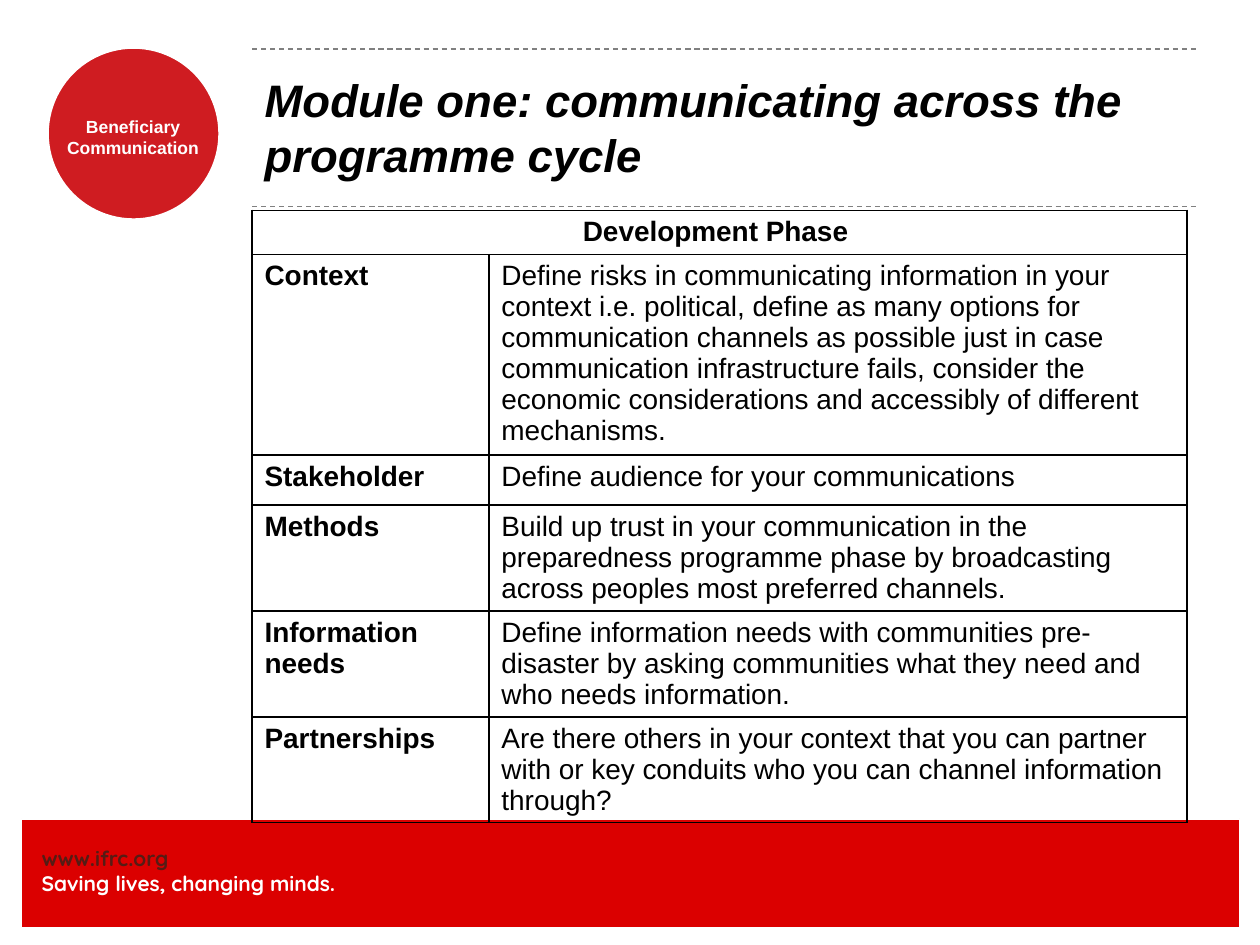
import pptx
import pptx.util
import pptx.dml.color
import pptx.enum.dml
import pptx.enum.shapes
import pptx.enum.text
import pptx.oxml
import pptx.oxml.ns
from lxml import etree

RGB = pptx.dml.color.RGBColor
BAR_RED = RGB(0xDB, 0x00, 0x00)
BADGE_RED = RGB(0xCF, 0x1C, 0x21)
BROWN = RGB(0x55, 0x1C, 0x15)
WHITE = RGB(0xFF, 0xFF, 0xFF)
BLACK = RGB(0, 0, 0)
GREY = RGB(0x80, 0x80, 0x80)

Inches, Pt = pptx.util.Inches, pptx.util.Pt
SHAPES = pptx.enum.shapes.MSO_SHAPE
ALIGN = pptx.enum.text.PP_ALIGN
ANCHOR = pptx.enum.text.MSO_ANCHOR

# Content column shared by the rules, the title and the table
LEFT, WIDTH = 2, 7.5
RULE_TOPS = (0.39, 1.64)
COLUMN_WIDTHS = (1.88, 5.54)
ROW_HEIGHTS = (0.35, 1.59, 0.4, 0.84, 0.84, 0.84)
TABLE_LINE = 17.7  # fixed line pitch keeps the table above the footer text

PHASE = "Development Phase "
TOPICS = [
    ("Context", "Define risks in communicating information in your context i.e. "
     "political, define as many options for communication channels as possible "
     "just in case communication infrastructure fails, consider the economic "
     "considerations and accessibly of different mechanisms."),
    ("Stakeholder", "Define audience for your communications"),
    ("Methods", "Build up trust in your communication in the preparedness "
     "programme phase by broadcasting across peoples most preferred channels."),
    ("Information needs", "Define information needs with communities "
     "pre-disaster by asking communities what they need and who needs information."),
    ("Partnerships", "Are there others in your context that you can partner with "
     "or key conduits who you can channel information through?"),
]


def style(paragraph, size, color, bold=True, italic=False, face="Arial", align=ALIGN.LEFT):
    paragraph.alignment = align
    for run in paragraph.runs:
        run.font.name = face
        run.font.size = Pt(size)
        run.font.bold = bold
        run.font.italic = italic
        run.font.color.rgb = color


def add_block(slide, kind, box, fill, line_width):
    block = slide.shapes.add_shape(kind, *map(Inches, box))
    block.shadow.inherit = False
    block.fill.solid()
    block.fill.fore_color.rgb = fill
    block.line.color.rgb = WHITE
    block.line.width = Pt(line_width)


def add_label(slide, box, text):
    frame = slide.shapes.add_textbox(*map(Inches, box)).text_frame
    frame.word_wrap = True
    frame.margin_left = frame.margin_right = frame.margin_top = frame.margin_bottom = 0
    frame.text = text
    return frame.paragraphs


def add_rule(slide, top):
    rule = slide.shapes.add_connector(
        pptx.enum.shapes.MSO_CONNECTOR.STRAIGHT,
        Inches(LEFT), Inches(top), Inches(LEFT + WIDTH), Inches(top))
    rule.line.color.rgb = GREY
    rule.line.width = Pt(0.75)
    rule.line.dash_style = pptx.enum.dml.MSO_LINE.DASH
    etree.SubElement(rule._element.spPr, pptx.oxml.ns.qn("a:effectLst"))


def add_title(slide, text):
    title = slide.shapes.title
    title.left, title.top = Inches(LEFT), Inches(0.38)
    title.width, title.height = Inches(WIDTH), Inches(1.25)
    frame = title.text_frame
    frame.text = text
    frame.word_wrap = True
    frame.auto_size = pptx.enum.text.MSO_AUTO_SIZE.NONE
    frame.vertical_anchor = ANCHOR.MIDDLE
    style(frame.paragraphs[0], 26, BLACK, italic=True)


def border_cell(cell):
    properties = cell._tc.get_or_add_tcPr()
    for index, side in enumerate(("lnL", "lnR", "lnT", "lnB")):
        properties.insert(index, pptx.oxml.parse_xml(
            f'<a:{side} {pptx.oxml.ns.nsdecls("a")} w="12700">'
            f'<a:solidFill><a:srgbClr val="{BLACK}"/></a:solidFill></a:{side}>'))


def fill_cell(cell, text, bold=True, align=ALIGN.LEFT):
    cell.text = text
    paragraph = cell.text_frame.paragraphs[0]
    paragraph.line_spacing = Pt(TABLE_LINE)
    style(paragraph, 16, BLACK, bold, align=align)


def add_topics(slide):
    table = slide.shapes.add_table(
        len(ROW_HEIGHTS), len(COLUMN_WIDTHS), Inches(LEFT), Inches(1.67),
        Inches(sum(COLUMN_WIDTHS)), Inches(sum(ROW_HEIGHTS))).table
    table.first_row = table.horz_banding = False
    for column, width in zip(table.columns, COLUMN_WIDTHS):
        column.width = Inches(width)
    for row, height in zip(table.rows, ROW_HEIGHTS):
        row.height = Inches(height)
        for cell in row.cells:
            cell.fill.background()
            border_cell(cell)

    # Heading across both columns, then one topic a row
    table.cell(0, 0).merge(table.cell(0, 1))
    fill_cell(table.cell(0, 0), PHASE, align=ALIGN.CENTER)
    table.cell(0, 1).text_frame.paragraphs[0].line_spacing = Pt(TABLE_LINE)
    for row, (topic, advice) in enumerate(TOPICS, start=1):
        fill_cell(table.cell(row, 0), topic)
        fill_cell(table.cell(row, 1), advice, bold=False)


def main():
    deck = pptx.Presentation()
    deck.slide_width, deck.slide_height = Inches(10), Inches(7.5)
    slide = deck.slides.add_slide(deck.slide_layouts.get_by_name("Title Only"))

    # Footer bar with address and motto
    add_block(slide, SHAPES.RECTANGLE, (0.17, 6.5, 9.67, 0.86), BAR_RED, 0.75)
    footer = add_label(slide, (0.33, 6.71, 3.42, 0.4),
                       "www.ifrc.org\nSaving lives, changing minds.")
    for paragraph, color in zip(footer, (BROWN, WHITE)):
        style(paragraph, 12, color, face="Quicksand")

    # Round badge
    add_block(slide, SHAPES.OVAL, (0.37, 0.37, 1.38, 1.38), BADGE_RED, 2.5)
    badge = add_label(slide, (0.43, 0.92, 1.25, 0.34), "Beneficiary Communication")
    style(badge[0], 10, WHITE, align=ALIGN.CENTER)

    # Title between dashed rules, table below
    for top in RULE_TOPS:
        add_rule(slide, top)
    add_title(slide, "Module one: communicating across the programme cycle")
    add_topics(slide)

    deck.save("out.pptx")


if __name__ == "__main__":
    main()
